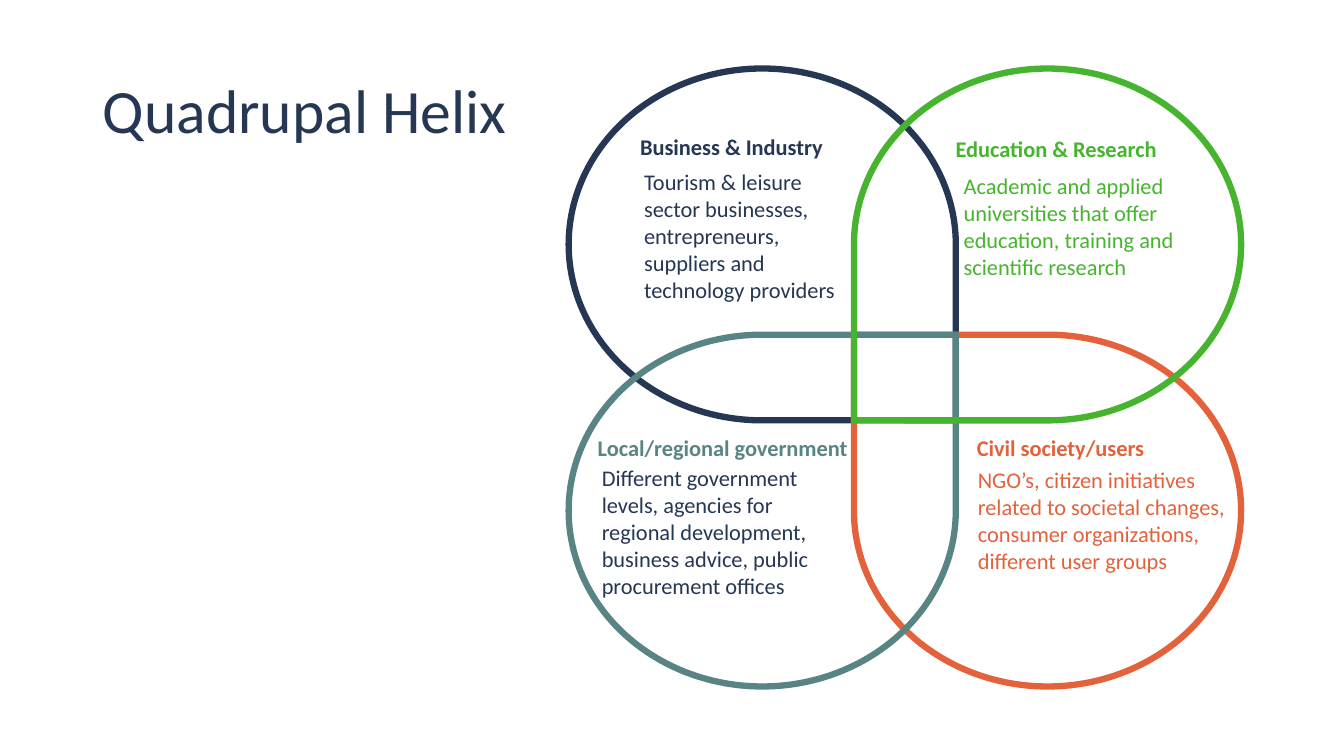
from dataclasses import dataclass

from pptx import Presentation
from pptx.dml.color import RGBColor
from pptx.enum.shapes import MSO_SHAPE
from pptx.enum.text import MSO_ANCHOR, MSO_AUTO_SIZE, PP_ALIGN
from pptx.util import Inches, Pt

NAVY = RGBColor(0x25, 0x37, 0x53)
ORANGE = RGBColor(0xE3, 0x62, 0x3B)
TEAL = RGBColor(0x58, 0x84, 0x83)
GREEN = RGBColor(0x46, 0xB4, 0x2E)
FONT = "Calibri"
HELIX_LEFT, HELIX_TOP = 5.64, 0.68
PETAL_WIDTH, PETAL_HEIGHT = 3.84, 3.49
COLUMN_STEP, ROW_STEP = 2.83, 2.64


@dataclass
class Sector:
    """One helix sector; text boxes are (x, y, width, height) within its petal."""
    column: int
    row: int
    color: RGBColor
    body_color: RGBColor
    turn: dict
    heading: str
    heading_box: tuple
    body: list
    body_box: tuple

    def origin(self):
        """Return the left and top of the petal in inches."""
        return HELIX_LEFT + self.column * COLUMN_STEP, HELIX_TOP + self.row * ROW_STEP


SECTORS = [
    Sector(0, 0, NAVY, NAVY, {"flipV": "1"},
           "Business & Industry", (0.61, 0.59, 2.42, 0.37),
           ["Tourism & leisure sector businesses, entrepreneurs, suppliers and "
            "technology providers"], (0.65, 0.94, 2.34, 1.45)),
    Sector(1, 1, ORANGE, ORANGE, {"flipH": "1"},
           "Civil society/users", (1.12, 0.94, 2.18, 0.37),
           ["NGO’s, citizen initiatives related to societal changes, consumer "
            "organizations,", "different user groups"], (1.13, 1.26, 2.68, 1.18)),
    Sector(0, 1, TEAL, NAVY, {},
           "Local/regional government", (0.19, 0.94, 2.91, 0.37),
           ["Different government levels, agencies for regional development, "
            "business advice, public procurement offices"], (0.23, 1.24, 2.48, 1.45)),
    Sector(1, 0, GREEN, GREEN, {"rot": "10800000"},
           "Education & Research", (0.91, 0.61, 2.42, 0.37),
           ["Academic and applied universities that offer education, training and "
            "scientific research"], (0.99, 0.98, 2.34, 1.18)),
]


def add_run(paragraph, text, size, color, bold=False):
    """Append one formatted run to a paragraph."""
    run = paragraph.add_run()
    run.text = text
    run.font.name = FONT
    run.font.size = Pt(size)
    run.font.bold = bold
    run.font.color.rgb = color


def add_title(slide, text, left, top, width, height):
    """Place and format the title placeholder."""
    title = slide.shapes.title
    title.left, title.top = Inches(left), Inches(top)
    title.width, title.height = Inches(width), Inches(height)
    title.text_frame.vertical_anchor = MSO_ANCHOR.MIDDLE
    paragraph = title.text_frame.paragraphs[0]
    paragraph.alignment = PP_ALIGN.LEFT
    paragraph.line_spacing = 0.9
    add_run(paragraph, text, 44, NAVY)


def add_petal(slide, sector):
    """Draw a teardrop outline pointing at the centre of the helix."""
    left, top = sector.origin()
    petal = slide.shapes.add_shape(
        MSO_SHAPE.TEAR, Inches(left), Inches(top),
        Inches(PETAL_WIDTH), Inches(PETAL_HEIGHT))
    petal.shadow.inherit = False
    petal.fill.background()
    petal.line.color.rgb = sector.color
    petal.line.width = Pt(4.5)
    for name, value in sector.turn.items():
        petal._element.spPr.xfrm.set(name, value)


def add_text(slide, origin, box, lines, color, bold=False):
    """Place a wrapped text box relative to its petal, one paragraph per line."""
    x, y, width, height = box
    frame = slide.shapes.add_textbox(
        Inches(origin[0] + x), Inches(origin[1] + y),
        Inches(width), Inches(height)).text_frame
    frame.word_wrap = True
    frame.auto_size = MSO_AUTO_SIZE.SHAPE_TO_FIT_TEXT
    for index, line in enumerate(lines):
        paragraph = frame.add_paragraph() if index else frame.paragraphs[0]
        add_run(paragraph, line, 16, color, bold)


def add_helix(slide, sectors):
    """Draw the overlapping petals, then their headings and descriptions."""
    for sector in sectors:
        add_petal(slide, sector)
    for sector in sectors:
        origin = sector.origin()
        add_text(slide, origin, sector.heading_box, [sector.heading], sector.color, True)
        add_text(slide, origin, sector.body_box, sector.body, sector.body_color)


def main():
    """Build and save the presentation."""
    presentation = Presentation()
    presentation.slide_width, presentation.slide_height = Inches(13.33), Inches(7.5)
    slide = presentation.slides.add_slide(presentation.slide_layouts[5])
    add_title(slide, "Quadrupal Helix", 0.92, 0.4, 11.5, 1.45)
    add_helix(slide, SECTORS)
    presentation.save("out.pptx")


if __name__ == "__main__":
    main()
